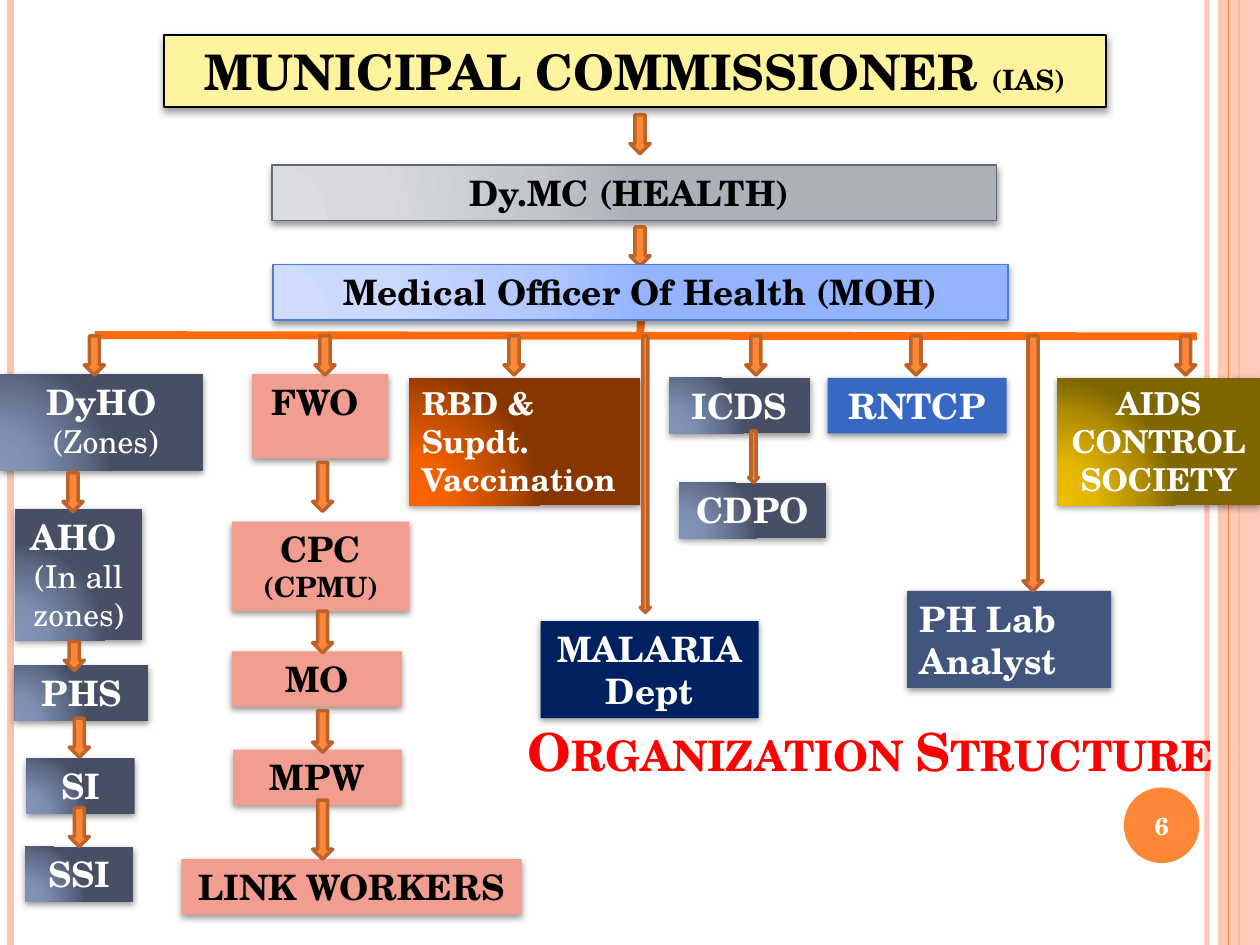
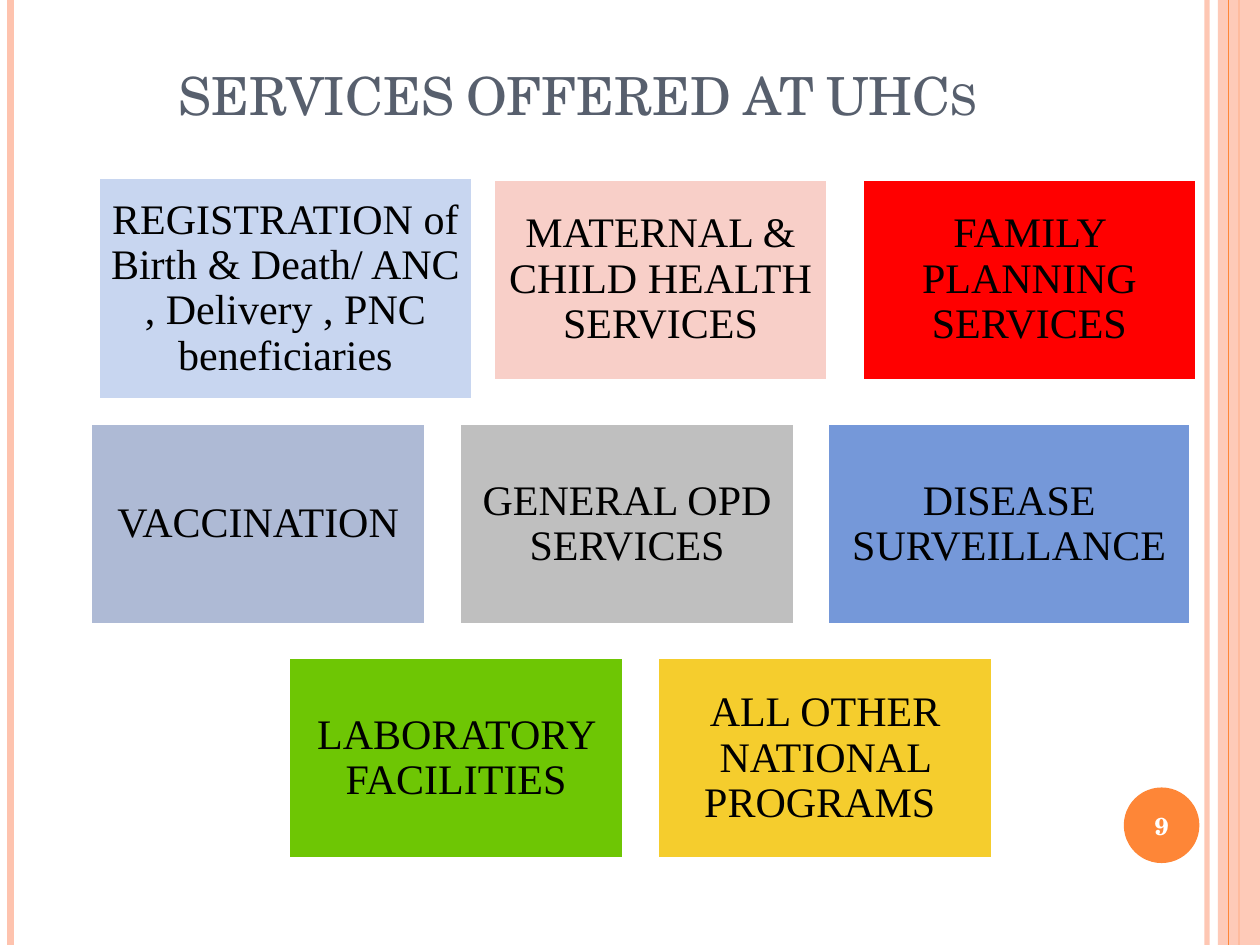
import dataclasses

import pptx
import pptx.dml.color
import pptx.enum.shapes
import pptx.enum.text
import pptx.oxml
import pptx.oxml.ns
import pptx.util

Pt = pptx.util.Pt
SHAPE = pptx.enum.shapes.MSO_SHAPE
ALIGN = pptx.enum.text.PP_ALIGN
ANCHOR = pptx.enum.text.MSO_ANCHOR


@dataclasses.dataclass(frozen=True)
class Theme:
    width: float = 720
    height: float = 540
    heading_font: str = "TeX Gyre Schola"
    card_font: str = "Times New Roman"
    title_size: int = 30
    top_size: int = 28
    card_size: int = 24
    node_size: int = 20
    detail_size: int = 18
    note_size: int = 16
    page_size: int = 14
    black: str = "000000"
    white: str = "FFFFFF"
    orange: str = "FE8637"
    arrow_edge: str = "BC6329"
    peach: str = "FEC3AE"
    branch_line: str = "FF6B0A"
    red: str = "FF0000"
    title_grey: str = "575F6D"
    yellow: str = "FFF39D"
    salmon: str = "F19E91"
    navy: str = "002060"
    slate_flat: str = "42557F"
    blue: str = "3668C4"
    # Four-colour tuples are radial gradients
    slate: tuple = ("8494B9", "7F8FB2", "5E6B87", "464F64")
    rust: tuple = ("FD6400", "F46100", "B74900", "873600")
    gold: tuple = ("EDBE00", "E5B700", "AC8900", "7F6600")
    silver: tuple = ("DADCE0", "D7D9DD", "C1C5CB", "ABB0B9")
    sky: tuple = ("CFDCFF", "CBD9FF", "AFC6FF", "95B4FF")
    silver_edge: str = "636A74"
    sky_edge: str = "4F7CCF"


THEME = Theme()
GRADIENT_STOPS = (0, 30, 75, 100)
LINE_HEIGHT = 31.7
TWO_LINES = 55.4


def rgb(colour):
    return pptx.dml.color.RGBColor.from_string(colour)


def drawing_xml(tag, attributes, content):
    return pptx.oxml.parse_xml(
        f'<a:{tag} {pptx.oxml.ns.nsdecls("a")} {attributes}>{content}</a:{tag}>')


def apply(target, **formats):
    for attribute, value in formats.items():
        setattr(target, attribute, value)


def fade(element, percent):
    """Make the element's colour partly transparent."""
    for colour in element.spPr.iter(pptx.oxml.ns.qn("a:srgbClr")):
        colour.append(drawing_xml("alpha", f'val="{percent * 1000}"', ""))


def paint(shape, fill):
    if isinstance(fill, str):
        shape.fill.solid()
        shape.fill.fore_color.rgb = rgb(fill)
        return
    stops = "".join(
        f'<a:gs pos="{position * 1000}"><a:srgbClr val="{colour}"/></a:gs>'
        for position, colour in zip(GRADIENT_STOPS, fill))
    gradient = drawing_xml("gradFill", 'rotWithShape="1"', (
        f'<a:gsLst>{stops}</a:gsLst><a:path path="circle">'
        '<a:fillToRect l="5000" t="100000" r="120000" b="10000"/></a:path>'))
    shape.element.spPr.find(pptx.oxml.ns.qn("a:prstGeom")).addnext(gradient)


def cast_shadow(shape, percent, distance):
    effects = shape.element.spPr.find(pptx.oxml.ns.qn("a:effectLst"))
    effects.append(drawing_xml(
        "outerShdw",
        f'blurRad="{Pt(4)}" dist="{Pt(distance)}" dir="5400000" rotWithShape="0"',
        f'<a:srgbClr val="{THEME.black}"><a:alpha val="{percent * 1000}"/></a:srgbClr>'))


def add_block(slide, preset, area, fill, edge=None, edge_width=1):
    block = slide.shapes.add_shape(preset, *map(Pt, area))
    block.shadow.inherit = False
    paint(block, fill)
    if edge:
        block.line.color.rgb = rgb(edge)
        block.line.width = Pt(edge_width)
    else:
        block.line.fill.background()
    return block


def add_line(slide, start, end, colour, width):
    line = slide.shapes.add_connector(
        pptx.enum.shapes.MSO_CONNECTOR.STRAIGHT, *map(Pt, start + end))
    line.line.color.rgb = rgb(colour)
    line.line.width = Pt(width)
    line.element.spPr.append(drawing_xml("effectLst", "", ""))
    return line


def write(holder, paragraphs, colour, font=THEME.heading_font, align=ALIGN.CENTER,
          anchor=ANCHOR.TOP, spacing=None, **frame_formats):
    """Fill a shape with paragraphs, each a list of (text, size, bold) runs."""
    frame = holder.text_frame
    apply(frame, word_wrap=True, vertical_anchor=anchor, **frame_formats)
    for index, runs in enumerate(paragraphs):
        paragraph = frame.add_paragraph() if index else frame.paragraphs[0]
        apply(paragraph, alignment=align, line_spacing=spacing)
        for text, size, bold in runs:
            run = paragraph.add_run()
            run.text = text
            apply(run.font, name=font, size=Pt(size), bold=bold)
            run.font.color.rgb = rgb(colour)


def add_title(slide, area, text, colour, bold):
    title = slide.shapes.add_textbox(*map(Pt, area))
    write(title, [[(text, THEME.title_size, bold)]], colour, anchor=ANCHOR.BOTTOM)
    title.text_frame.paragraphs[0].runs[0].font._element.set("cap", "small")


def margins(size):
    return {f"margin_{side}": Pt(size) for side in ("left", "top", "right", "bottom")}


def add_frame(slide, page):
    """Draw the side bands and the page number that every slide shares."""
    def band_line(x, colour, width):
        return add_line(slide, (x, 0), (x, THEME.height), colour, width)

    fade(band_line(689.8, THEME.peach, 3).element, 93)
    band_line(6, THEME.peach, 4.5)
    band_line(708, THEME.orange, 1.5)
    band = add_block(slide, SHAPE.RECTANGLE, (696, 0, 24, THEME.height), THEME.peach)
    fade(band.element, 87)
    band_line(702, THEME.orange, 0.75)
    badge = add_block(slide, SHAPE.OVAL, (642.2, 450, 43.2, 43.2), THEME.orange)
    write(badge, [[(str(page), THEME.page_size, True)]], THEME.white,
          anchor=ANCHOR.MIDDLE, **margins(0))


def add_node(slide, area, fill, paragraphs, colour=THEME.white, edge=None,
             align=ALIGN.CENTER):
    """Add one post of the organization; plain text is a single bold line."""
    if isinstance(paragraphs, str):
        paragraphs = [[(paragraphs, THEME.node_size, True)]]
    node = add_block(slide, SHAPE.RECTANGLE, area, fill, edge)
    cast_shadow(node, *((40, 2) if edge else (42, 1.6)))
    write(node, paragraphs, colour, align=align)


def add_arrow(slide, left, top, height=22.3, width=11.5):
    add_block(slide, SHAPE.DOWN_ARROW, (left, top, width, height),
              THEME.orange, THEME.arrow_edge, 2)


def add_leaders(slide):
    add_node(slide, (93.6, 20.2, 538.6, 41), THEME.yellow,
             [[("MUNICIPAL COMMISSIONER ", THEME.top_size, True),
               ("(IAS)", THEME.note_size, True)]], THEME.black, THEME.black)
    add_node(slide, (155.5, 94.3, 414, LINE_HEIGHT), THEME.silver,
             "Dy.MC (HEALTH) ", THEME.black, THEME.silver_edge)
    for top in (65.5, 129.6):
        add_arrow(slide, 360, top)
    add_node(slide, (156.2, 151.2, 419.8, LINE_HEIGHT), THEME.sky,
             "Medical Officer Of Health (MOH)", THEME.black, THEME.sky_edge)


def add_zone_posts(slide):
    node, detail = THEME.node_size, THEME.detail_size
    for area, text in (
        ((0, 213.8, 115.9, TWO_LINES),
         [[("DyHO", node, True)], [(" (Zones)", detail, False)]]),
        ((8.6, 290.9, 72.7, 74.9),
         [[("AHO ", node, True)], [("(In all zones)", detail, False)]]),
        ((8.6, 380.2, 76.3, LINE_HEIGHT), "PHS"),
        ((15.1, 433.4, 61.9, LINE_HEIGHT), "SI"),
        ((14.4, 483.8, 61.9, LINE_HEIGHT), "SSI"),
    ):
        add_node(slide, area, THEME.slate, text)
    for left, top, height in ((36, 270, 22.3), (36.7, 366.5, 16.6),
                              (39.6, 410.4, 22.3), (39.6, 461.5, 22.3)):
        add_arrow(slide, left, top, height)


def add_family_posts(slide):
    for area, text in (
        ((144, 213.8, 77.8, 48.2), "FWO "),
        ((132.5, 298.1, 101.5, 51.1),
         [[("CPC ", THEME.node_size, True), ("(CPMU)", THEME.note_size, True)]]),
        ((132.5, 372.2, 97.2, LINE_HEIGHT), "MO"),
        ((133.2, 428.4, 96.5, LINE_HEIGHT), "MPW"),
        ((103.7, 491, 194.4, LINE_HEIGHT), "LINK WORKERS"),
    ):
        add_node(slide, area, THEME.salmon, text, THEME.black)
    for top, height in ((264.2, 28.1), (349.2, 23.8), (406.1, 23.8), (457.2, 33.8)):
        add_arrow(slide, 178.6, top, height)


def add_departments(slide):
    def detail_lines(*lines):
        return [[(line, THEME.detail_size, True)] for line in lines]

    for area, fill, text, align in (
        ((234, 216, 131.8, 72.7), THEME.rust,
         detail_lines("RBD &", "Supdt. Vaccination"), ALIGN.LEFT),
        ((308.9, 355, 124.6, TWO_LINES), THEME.navy, "MALARIA Dept", ALIGN.CENTER),
        ((382.3, 216, 80.6, LINE_HEIGHT), THEME.slate, "ICDS", ALIGN.CENTER),
        ((388.1, 275.8, 84.2, LINE_HEIGHT), THEME.slate, "CDPO", ALIGN.CENTER),
        ((473, 216, 102.2, LINE_HEIGHT), THEME.blue, "RNTCP", ALIGN.CENTER),
        ((518.4, 337.7, 116.6, TWO_LINES), THEME.slate_flat, "PH Lab Analyst",
         ALIGN.LEFT),
        ((604.1, 216, 115.9, 72.7), THEME.gold,
         detail_lines("AIDS", "CONTROL", "SOCIETY"), ALIGN.CENTER),
    ):
        add_node(slide, area, fill, text, align=align)
    add_arrow(slide, 427.7, 246.2, 29.5, 5.8)


def add_branch_arrows(slide):
    top = 192
    for left in (48.2, 180, 288, 426.2, 517.7, 671.8):
        add_arrow(slide, left, top)
    add_arrow(slide, 365.8, top, 158, 5.8)
    add_arrow(slide, 584.6, top, 145.7)


def build_organization(slide):
    add_frame(slide, 6)
    add_line(slide, (54, 191.5), (684, 192.2), THEME.branch_line, 4.5)
    add_line(slide, (366.5, 180), (365.8, 191.5), THEME.branch_line, 4.5)
    add_leaders(slide)
    add_zone_posts(slide)
    add_family_posts(slide)
    add_departments(slide)
    add_branch_arrows(slide)
    add_title(slide, (275, 383, 445, 67.7), "Organization Structure", THEME.red, True)


def build_services(slide):
    add_frame(slide, 9)
    add_title(slide, (36, 21.6, 588.2, 54), "SERVICES OFFERED AT UHCs",
              THEME.title_grey, False)
    card_width, card_height, column_step = 191.5, 115.2, 210.8
    rows = (
        (102.2, 70.9, (
            ("REGISTRATION of Birth & Death/ ANC , Delivery , PNC beneficiaries",
             "C8D6F0", (56.2, 101.5, 213.8, 126.7)),
            ("MATERNAL & CHILD HEALTH SERVICES", "F8CFC8", None),
            ("FAMILY PLANNING SERVICES", THEME.red, None))),
        (241.9, 51.8, (
            ("VACCINATION", "AEBAD5", None),
            ("GENERAL OPD SERVICES", "BFBFBF", None),
            ("DISEASE SURVEILLANCE", "7598D9", (473, 241.9, 207.4, card_height)))),
        (375.8, 164.9, (
            ("LABORATORY FACILITIES", "6EC604", None),
            ("ALL OTHER NATIONAL PROGRAMS ", "F5CD2D", None))),
    )
    for top, first_left, services in rows:
        for column, (service, fill, own_area) in enumerate(services):
            area = own_area or (first_left + column * column_step, top,
                                card_width, card_height)
            card = add_block(slide, SHAPE.RECTANGLE, area, fill, THEME.white, 2)
            write(card, [[(service, THEME.card_size, False)]], THEME.black,
                  THEME.card_font, anchor=ANCHOR.MIDDLE, spacing=0.9, **margins(7.2))


def main():
    deck = pptx.Presentation()
    apply(deck, slide_width=Pt(THEME.width), slide_height=Pt(THEME.height))
    blank = deck.slide_layouts[6]
    for build in (build_organization, build_services):
        build(deck.slides.add_slide(blank))
    deck.save("out.pptx")


if __name__ == "__main__":
    main()
